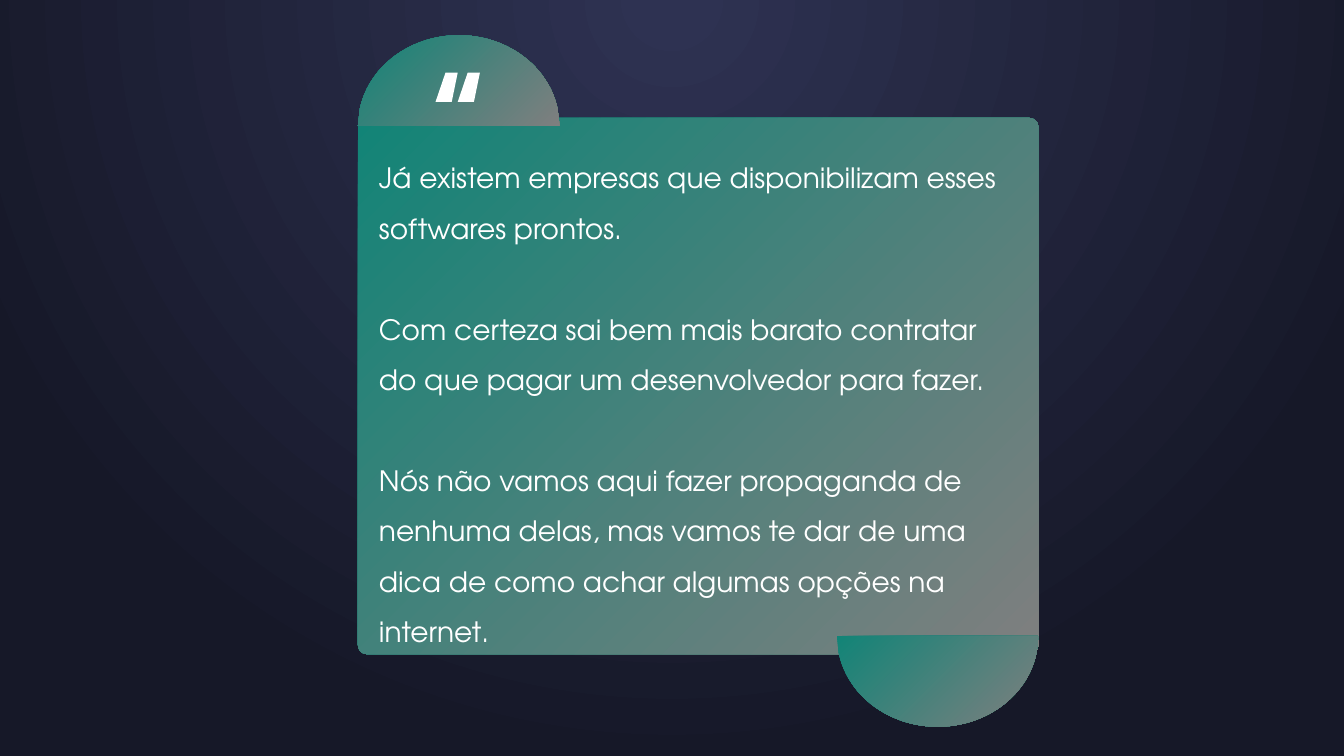
from dataclasses import dataclass

from lxml.etree import SubElement
from pptx import Presentation
from pptx.dml.color import RGBColor as Rgb
from pptx.enum.shapes import MSO_SHAPE as Shape
from pptx.enum.text import MSO_AUTO_SIZE as Fit
from pptx.oxml.ns import qn
from pptx.util import Inches as In, Pt


@dataclass(frozen=True)
class Theme:
    """Colours and type of the slide."""
    glow: str = "2E3252"
    night: str = "161828"
    teal: str = "128477"
    gray: str = "7F7F7F"
    white: str = "FFFFFF"
    font: str = "TeX Gyre Adventor"
    size: int = 20
    gap: int = 36


THEME = Theme()
CARD = (3.55, 1.17, 6.75, 5.32)
CAP = (2, 0.9)
BAR = [(0.45, 0), (1, 0), (0.73, 1), (0, 1)]
QUOTE = [
    "Já existem empresas que disponibilizam esses softwares prontos.",
    "Com certeza sai bem mais barato contratar do que pagar um desenvolvedor para fazer.",
    "Nós não vamos aqui fazer propaganda de nenhuma delas, mas vamos te dar de uma "
    "dica de como achar algumas opções na internet.",
]


def blend(fill, first, last):
    """Give a fill two gradient colours."""
    fill.gradient()
    for stop, tint in zip(fill.gradient_stops, (first, last)):
        stop.color.rgb = Rgb.from_string(tint)


def paint(shape, solid=None):
    """Fill a shape with one colour or with the card gradient."""
    shape.shadow.inherit = False
    shape.line.fill.background()
    if solid:
        shape.fill.solid()
        shape.fill.fore_color.rgb = Rgb.from_string(solid)
    else:
        blend(shape.fill, THEME.teal, THEME.gray)
        shape.fill.gradient_angle = 315


def outline(shapes, loops, box, solid=None):
    """Draw closed loops given as shares of a box."""
    left, top, wide, high = box
    loops = [[(In(left + x * wide), In(top + y * high)) for x, y in loop] for loop in loops]
    pen = shapes.build_freeform(*loops[0][0])
    for k, loop in enumerate(loops):
        if k:
            pen.move_to(*loop[0])
        pen.add_line_segments(loop[1:], close=True)
    paint(pen.convert_to_shape(), solid)


def curve(ends, steps=24):
    """Sample a cubic curve."""
    a, b, c, d = ends
    for k in range(steps + 1):
        t = k / steps
        u = 1 - t
        yield tuple(u**3 * p + 3 * u * u * t * q + 3 * u * t * t * r + t**3 * s
                    for p, q, r, s in zip(a, b, c, d))


def dome(shapes, box, down=False):
    """Draw a half-round tab, pointing up or down."""
    side = list(curve([(0.99, 0.81), (0.945, 0.34), (0.74, 0), (0.5, 0)]))
    loop = [(0, 1), (1, 1)] + side + [(1 - x, y) for x, y in side[-2::-1]]
    outline(shapes, [[(x, 1 - y if down else y) for x, y in loop]], box)


def write(shapes, box, lines, font, size, tint, space, gap):
    """Place paragraphs in a text box."""
    area = shapes.add_textbox(*map(In, box)).text_frame
    area.word_wrap = True
    area.auto_size = Fit.SHAPE_TO_FIT_TEXT
    for k, line in enumerate(lines):
        para = area.add_paragraph() if k else area.paragraphs[0]
        para.line_spacing = space
        if k:
            para.space_before = Pt(gap)
        run = para.add_run()
        run.text = line
        run.font.name, run.font.size = font, Pt(size)
        run.font.color.rgb = Rgb.from_string(tint)


def backdrop(slide):
    """Set the round glow behind the slide."""
    fill = slide.background.fill
    blend(fill, THEME.glow, THEME.night)
    fill.gradient_stops[0].position = 0.02
    grad = slide.element.find(".//" + qn("a:gradFill"))
    grad.remove(grad.find(qn("a:lin")))
    ring = SubElement(grad, qn("a:path"), {"path": "circle"})
    SubElement(ring, qn("a:fillToRect"), {"l": "50000", "t": "-80000", "r": "50000", "b": "180000"})


def card(slide, box):
    """Draw the quote card, its tabs, mark and text in a box."""
    left, top, wide, high = box
    group = slide.shapes.add_group_shape().shapes
    panel = group.add_shape(Shape.ROUNDED_RECTANGLE, *map(In, box))
    panel.adjustments[0] = 0.017
    paint(panel)
    dome(group, (left, top - 0.82, *CAP))
    dome(group, (left + wide - CAP[0], top + high - 0.18, *CAP), down=True)
    mark = [[(x + k, y) for x, y in BAR] for k in (1, 0)]
    outline(slide.shapes, mark, (left + 0.77, top - 0.45, 0.22, 0.29), THEME.white)
    write(slide.shapes, (left + 0.11, top + 0.21, wide - 0.27, high - 0.23), QUOTE,
          font=THEME.font, size=THEME.size, tint=THEME.white, space=1.5, gap=THEME.gap)


def main():
    """Build and save the deck."""
    deck = Presentation()
    deck.slide_width, deck.slide_height = In(13.33), In(7.5)
    slide = deck.slides.add_slide(deck.slide_layouts[6])
    backdrop(slide)
    card(slide, CARD)
    deck.save("out.pptx")


if __name__ == "__main__":
    main()
